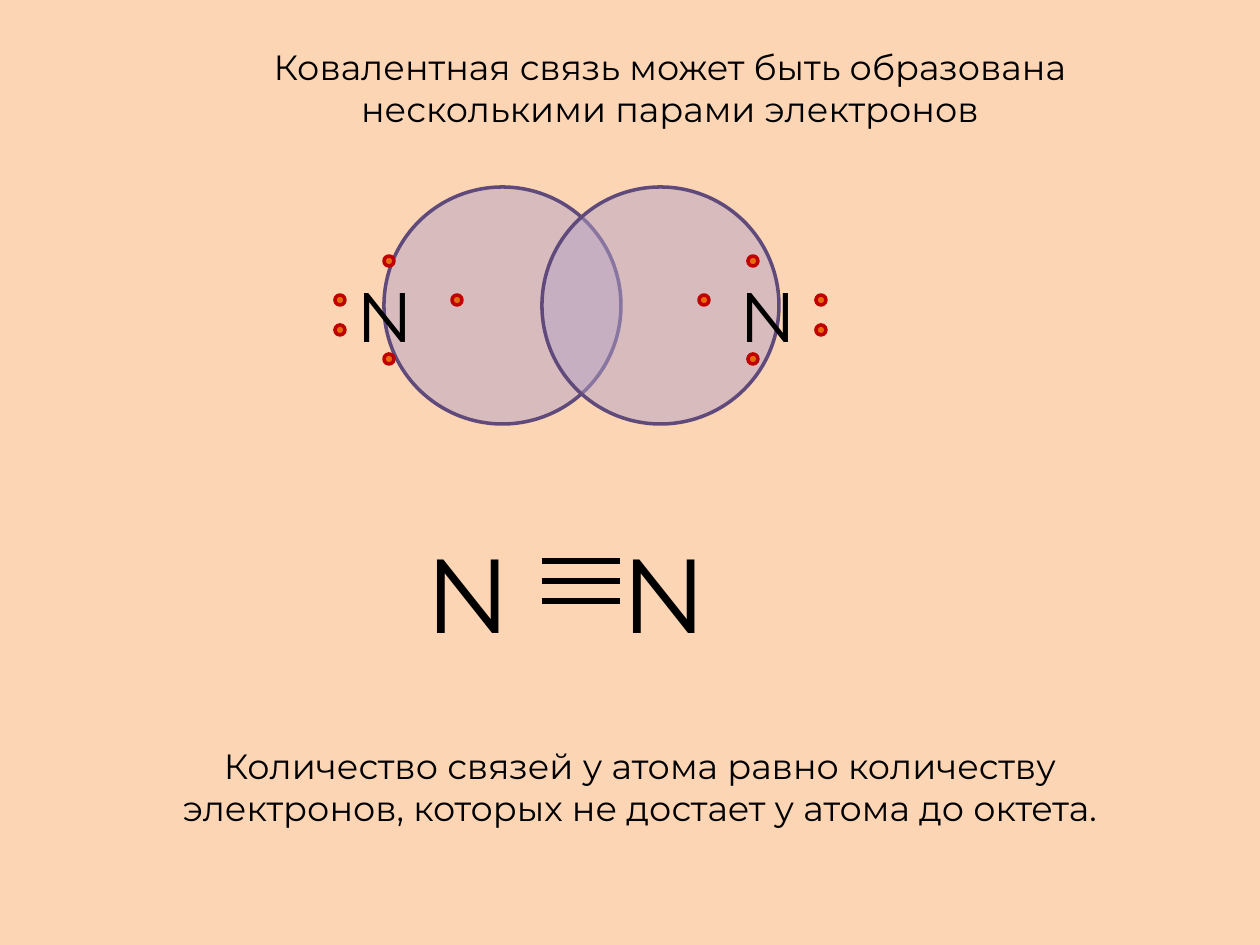
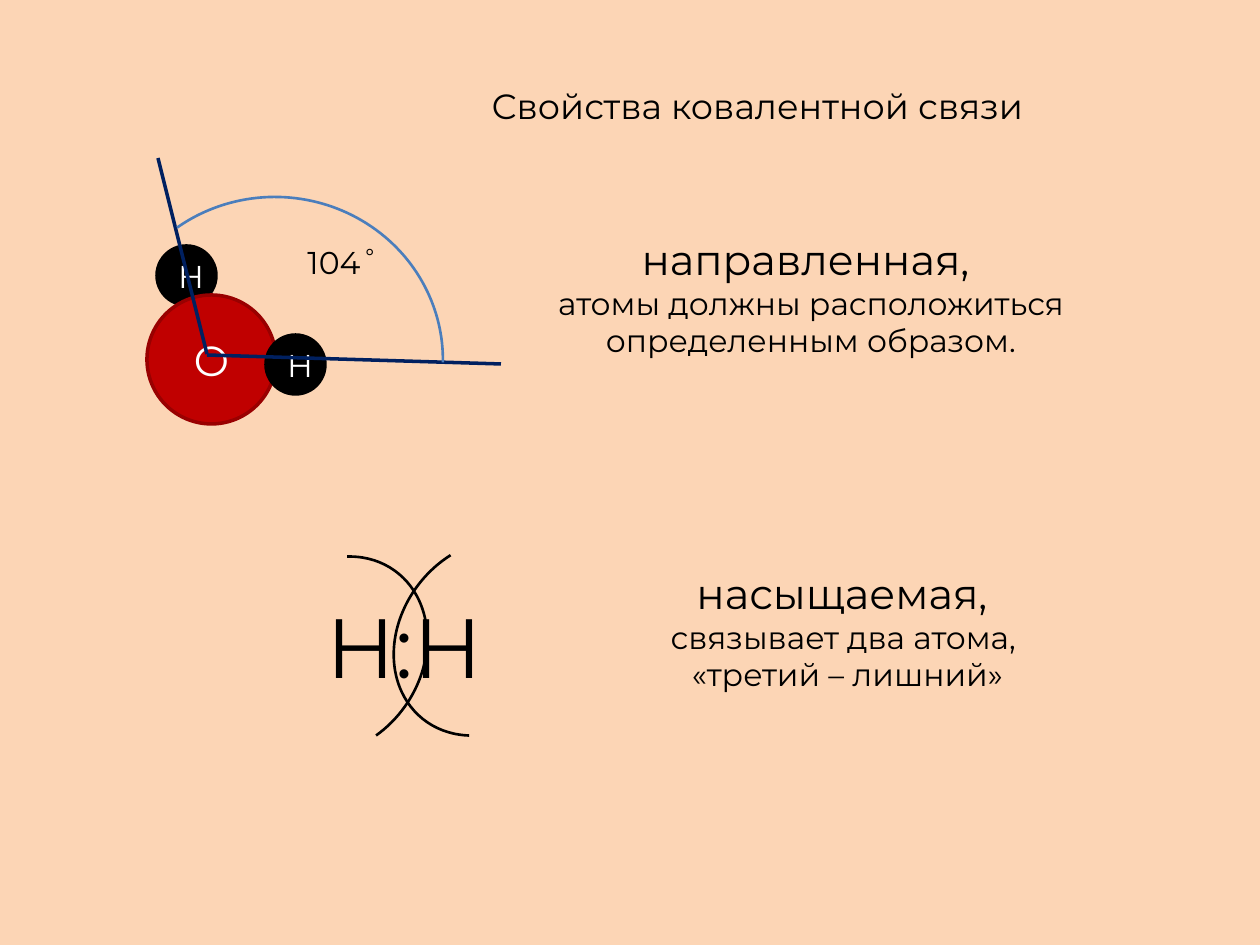
import pptx
import pptx.util
import pptx.dml.color
import pptx.enum.text
import pptx.enum.shapes
import lxml.etree

PX = 914400 // 126
FONT = "Montserrat"
SAND, BLACK, WHITE = "FCD5B5", "000000", "FFFFFF"
LILAC, PLUM = "B3A2C7", "604A7B"
RED, WINE, ORANGE = "C00000", "990000", "E46C0A"
NAVY, BLUE = "002060", "4B7EBC"
KIND = pptx.enum.shapes.MSO_SHAPE
ALIGN = pptx.enum.text.PP_ALIGN
MID, LEFT = ALIGN.CENTER, ALIGN.LEFT


def paint(fill, shade):
    fill.solid()
    fill.fore_color.rgb = pptx.dml.color.RGBColor.from_string(shade)


def write(frame, text, sizes, align, shade=BLACK):
    frame.text = text
    frame.word_wrap = True
    for para, size in zip(frame.paragraphs, sizes):
        para.alignment = align
        for run in para.runs:
            run.font.name = FONT
            run.font.size = pptx.util.Pt(size)
            paint(run.font.fill, shade)


dots = []
for left, low in ((335, 0), (699, 117)):
    for dx, dy in ((low, 30), (0, 0), (49, -39), (49, 59), (117, 0)):
        dots.append((left + dx, 295 + dy, 10, ORANGE, RED, "", 18))

pages = [
    {
        "title": ("Ковалентная связь может быть образована несколькими парами электронов",
                  168, 39, 1004, 97),
        "ovals": [(x, 187, 237, LILAC, PLUM, "", 18) for x in (384, 542)] + dots,
        "lines": [(542, y, 620, y, BLACK, 3) for y in (561, 581, 601)],
        "arcs": [],
        "texts": [
            ("N", 344, 266, 128, 97, [40], LEFT),
            ("N", 727, 266, 128, 97, [40], LEFT),
            ("N", 413, 522, 128, 140, [60], LEFT),
            ("N", 609, 522, 128, 140, [60], LEFT),
            ("Количество связей у атома равно количеству электронов, "
             "которых не достает у атома до октета.",
             138, 738, 1004, 140, [20], MID),
        ],
    },
    {
        "title": ("Свойства ковалентной связи", 413, 78, 689, 55),
        "ovals": [
            (157, 246, 59, BLACK, BLACK, "Н", 18),
            (147, 295, 129, RED, WINE, "О", 24),
            (266, 335, 59, BLACK, BLACK, "Н", 18),
        ],
        "lines": [(158, 158, 207, 354, NAVY, 2), (501, 364, 207, 355, NAVY, 2)],
        "arcs": [
            (108, 197, 335, 325, 3.2, 230.07, 357.79, BLUE),
            (246, 551, 175, 210, 35.6, 242.27, 26.22, BLACK),
            (401, 532, 175, 210, 218.9, 242.27, 26.22, BLACK),
        ],
        "texts": [
            ("направленная, \nатомы должны расположиться определенным образом.",
             452, 227, 718, 140, [24, 18], MID),
            ("104˚", 295, 237, 147, 50, [18], LEFT),
            ("насыщаемая, \nсвязывает два атома, \n«третий – лишний»",
             552, 561, 591, 140, [24, 18, 18], MID),
            ("Н:Н", 314, 588, 207, 115, [48], LEFT),
        ],
    },
]

deck = pptx.Presentation()
deck.slide_width, deck.slide_height = 1260 * PX, 945 * PX
paint(deck.slide_master.background.fill, SAND)

for page in pages:
    slide = deck.slides.add_slide(deck.slide_layouts[5])
    shapes = slide.shapes

    text, x, y, wide, high = page["title"]
    head = shapes.title
    head.left, head.top, head.width, head.height = x * PX, y * PX, wide * PX, high * PX
    write(head.text_frame, text, [20], MID)
    head.text_frame.auto_size = pptx.enum.text.MSO_AUTO_SIZE.NONE
    head.text_frame.vertical_anchor = pptx.enum.text.MSO_ANCHOR.TOP

    for x, y, size, fill, edge, text, pts in page["ovals"]:
        oval = shapes.add_shape(KIND.OVAL, x * PX, y * PX, size * PX, size * PX)
        oval.shadow.inherit = False
        paint(oval.fill, fill)
        paint(oval.line.fill, edge)
        oval.line.width = pptx.util.Pt(2)
        if text:
            write(oval.text_frame, text, [pts], MID, WHITE)
        if fill == LILAC:
            tint = oval.fill._xPr.find(".//" + pptx.oxml.ns.qn("a:srgbClr"))
            lxml.etree.SubElement(tint, pptx.oxml.ns.qn("a:alpha"), val="49000")

    for x, y, right, low, shade, width in page["lines"]:
        line = shapes.add_connector(pptx.enum.shapes.MSO_CONNECTOR.STRAIGHT,
                                    x * PX, y * PX, right * PX, low * PX)
        paint(line.line.fill, shade)
        line.line.width = pptx.util.Pt(width)
        lxml.etree.SubElement(line._element.spPr, pptx.oxml.ns.qn("a:effectLst"))

    for x, y, wide, high, turn, start, end, shade in page["arcs"]:
        arc = shapes.add_shape(KIND.ARC, x * PX, y * PX, wide * PX, high * PX)
        arc.shadow.inherit = False
        arc.rotation = turn
        arc.adjustments[0], arc.adjustments[1] = start * 0.6, end * 0.6
        arc.fill.background()
        paint(arc.line.fill, shade)
        arc.line.width = pptx.util.Pt(1.5)

    for text, x, y, wide, high, sizes, align in page["texts"]:
        box = shapes.add_textbox(x * PX, y * PX, wide * PX, high * PX)
        write(box.text_frame, text, sizes, align)

deck.save("out.pptx")
